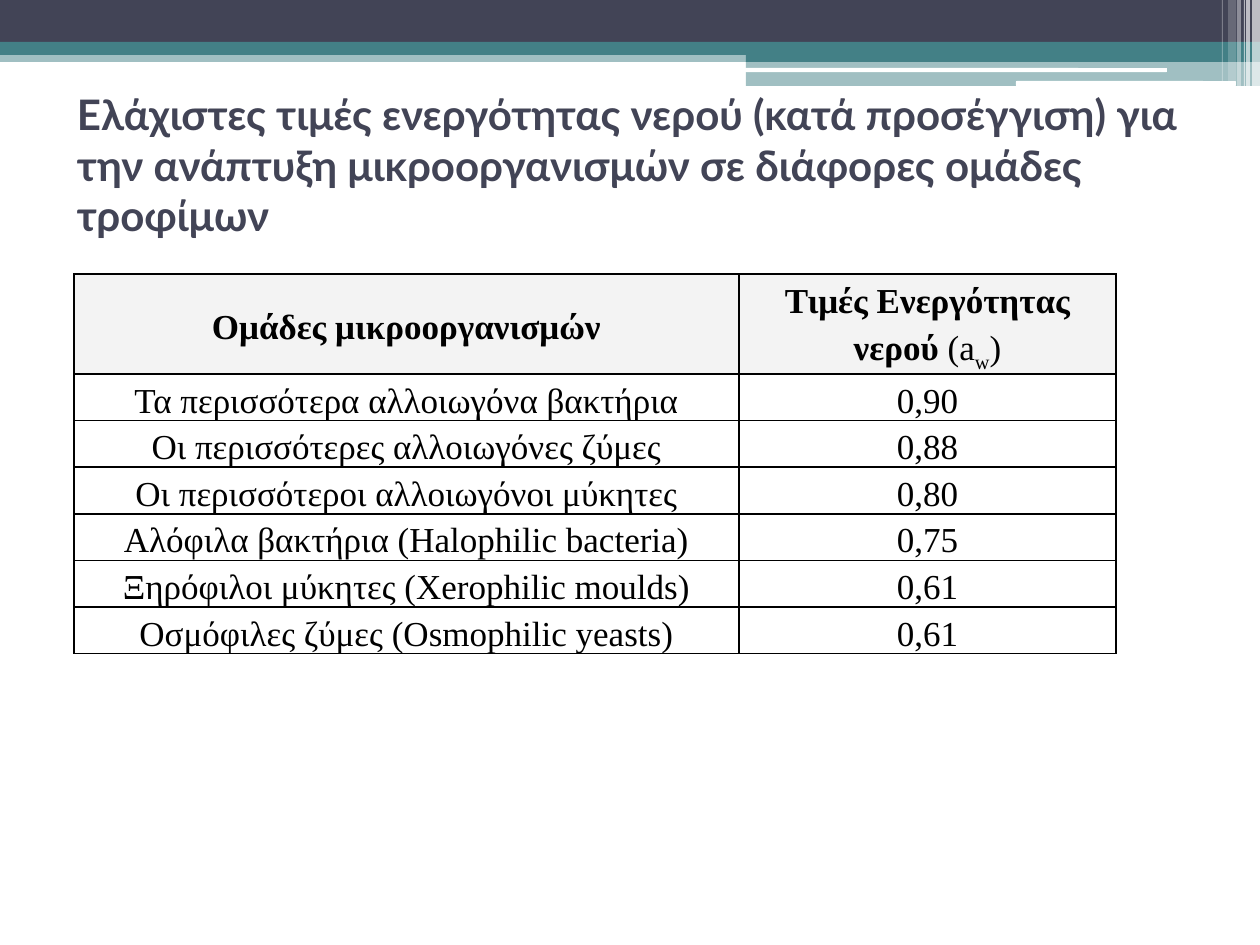
"""Build a slide with a table of minimum water activity for microorganism groups."""
from lxml import etree
from pptx import Presentation
from pptx.dml.color import RGBColor
from pptx.enum.shapes import MSO_SHAPE
from pptx.enum.text import MSO_ANCHOR, PP_ALIGN
from pptx.oxml import parse_xml
from pptx.oxml.ns import qn
from pptx.util import Pt

RECT, ROUND = MSO_SHAPE.RECTANGLE, MSO_SHAPE.ROUNDED_RECTANGLE
MIDDLE = MSO_ANCHOR.MIDDLE
LEFT, CENTER = PP_ALIGN.LEFT, PP_ALIGN.CENTER
NAVY = RGBColor(0x42, 0x44, 0x56)
TEAL = RGBColor(0x43, 0x80, 0x86)
WHITE = RGBColor(0xFF, 0xFF, 0xFF)
BLACK = RGBColor(0, 0, 0)
GREY = RGBColor(0xF3, 0xF3, 0xF3)
SCALE = 914400 / 126
NS = "http://schemas.openxmlformats.org/drawingml/2006/main"

TITLE = ("Ελάχιστες τιμές ενεργότητας νερού (κατά προσέγγιση) για την ανάπτυξη "
         "μικροοργανισμών σε διάφορες ομάδες τροφίμων")
BARS = [
    (RECT, 0, 50, 1260, 12, TEAL, 50),
    (RECT, 0, 0, 1260, 43, NAVY, 100),
    (RECT, 0, 42, 1260, 13, TEAL, 100),
    (RECT, 746, 49, 514, 13, TEAL, 100),
    (RECT, 746, 61, 514, 25, TEAL, 50),
    (ROUND, 745, 68, 422, 4, WHITE, 100),
    (ROUND, 1016, 81, 220, 5, WHITE, 100),
]
STRIPES = [
    (1252, 8, 86, 65),
    (1246, 4, 86, 65),
    (1244, 1, 86, 60),
    (1237, 4, 86, 40),
    (1228, 8, 81, 20),
    (1222, 1, 81, 30),
]
BOLD = {"bold": True}
SUB = {"baseline": "-25000"}
HEAD = [
    [("Ομάδες μικροοργανισμών", BOLD, {})],
    [("Τιμές Ενεργότητας νερού ", BOLD, {}), ("(a", {}, {}), ("w", {}, SUB), (")", {}, {})],
]
GROUPS = [
    ("Τα περισσότερα αλλοιωγόνα βακτήρια", "0,90"),
    ("Οι περισσότερες αλλοιωγόνες ζύμες", "0,88"),
    ("Οι περισσότεροι αλλοιωγόνοι μύκητες", "0,80"),
    ("Αλόφιλα βακτήρια (Halophilic bacteria)", "0,75"),
    ("Ξηρόφιλοι μύκητες (Xerophilic moulds)", "0,61"),
    ("Οσμόφιλες ζύμες (Osmophilic yeasts)", "0,61"),
]
CELL = {"size": Pt(20), "name": "Times New Roman", "bold": False}
HEADING = {"size": Pt(24), "name": "Lato", "bold": True}


def px(num):
    """Turn pixels into EMU."""
    return round(num * SCALE)


def apply(item, form):
    """Set each attribute named in form."""
    for key, val in form.items():
        setattr(item, key, val)


def add_run(para, text, form, color, extra):
    """Add a run of text with its font values and raw attributes."""
    run = para.add_run()
    run.text = text
    apply(run.font, form)
    run.font.color.rgb = color
    for key, val in extra.items():
        run.font._element.set(key, val)


def add_bar(slide, kind, left, top, width, height, color, alpha):
    """Add a plain filled bar, see-through below 100 percent."""
    bar = slide.shapes.add_shape(kind, px(left), px(top), px(width), px(height))
    bar.shadow.inherit = False
    bar.line.fill.background()
    bar.fill.solid()
    bar.fill.fore_color.rgb = color
    if alpha < 100:
        tint = bar._element.spPr.find(f".//{qn('a:srgbClr')}")
        etree.SubElement(tint, qn("a:alpha"), val=str(alpha * 1000))


def set_title(slide):
    """Place and format the title placeholder."""
    title = slide.shapes.title
    apply(title, {"left": px(64), "top": px(116), "width": px(1134), "height": px(147)})
    frame = title.text_frame
    apply(frame, {"word_wrap": True, "vertical_anchor": MIDDLE, "margin_left": px(13),
                  "margin_right": px(13), "margin_top": px(6), "margin_bottom": px(56)})
    para = frame.paragraphs[0]
    para.alignment = LEFT
    add_run(para, TITLE, HEADING, NAVY, {})


def add_edges(cell):
    """Draw a thin line on all four sides of a cell."""
    props = cell._tc.get_or_add_tcPr()
    for spot, side in enumerate(("lnL", "lnR", "lnT", "lnB")):
        props.insert(spot, parse_xml(
            f'<a:{side} xmlns:a="{NS}" w="12700"><a:solidFill>'
            f'<a:srgbClr val="{BLACK}"/></a:solidFill></a:{side}>'))


def fill_cell(cell, runs, color):
    """Write centred runs into a filled, outlined cell."""
    apply(cell, {"vertical_anchor": MIDDLE, "margin_left": px(6), "margin_right": px(6),
                 "margin_top": 0, "margin_bottom": 0})
    cell.fill.solid()
    cell.fill.fore_color.rgb = color
    add_edges(cell)
    para = cell.text_frame.paragraphs[0]
    apply(para, {"alignment": CENTER, "line_spacing": 1.2})
    for text, form, extra in runs:
        add_run(para, text, CELL | form, BLACK, extra)


def add_grid(slide):
    """Add the table of groups and their values."""
    rows = [HEAD] + [[[(text, {}, {})] for text in pair] for pair in GROUPS]
    grid = slide.shapes.add_table(len(rows), 2, px(74), px(274), px(1042), px(376)).table
    for col, width in zip(grid.columns, (665, 377)):
        col.width = px(width)
    for num, row in enumerate(rows):
        grid.rows[num].height = px(46 if num else 100)
        for col, runs in enumerate(row):
            fill_cell(grid.cell(num, col), runs, WHITE if num else GREY)


def main():
    """Build and save the slide."""
    deck = Presentation()
    apply(deck, {"slide_width": px(1260), "slide_height": px(945)})
    slide = deck.slides.add_slide(deck.slide_layouts[5])
    for bar in BARS:
        add_bar(slide, *bar)
    for left, width, height, alpha in STRIPES:
        add_bar(slide, RECT, left, 0, width, height, WHITE, alpha)
    add_grid(slide)
    set_title(slide)
    deck.save("out.pptx")


if __name__ == "__main__":
    main()
